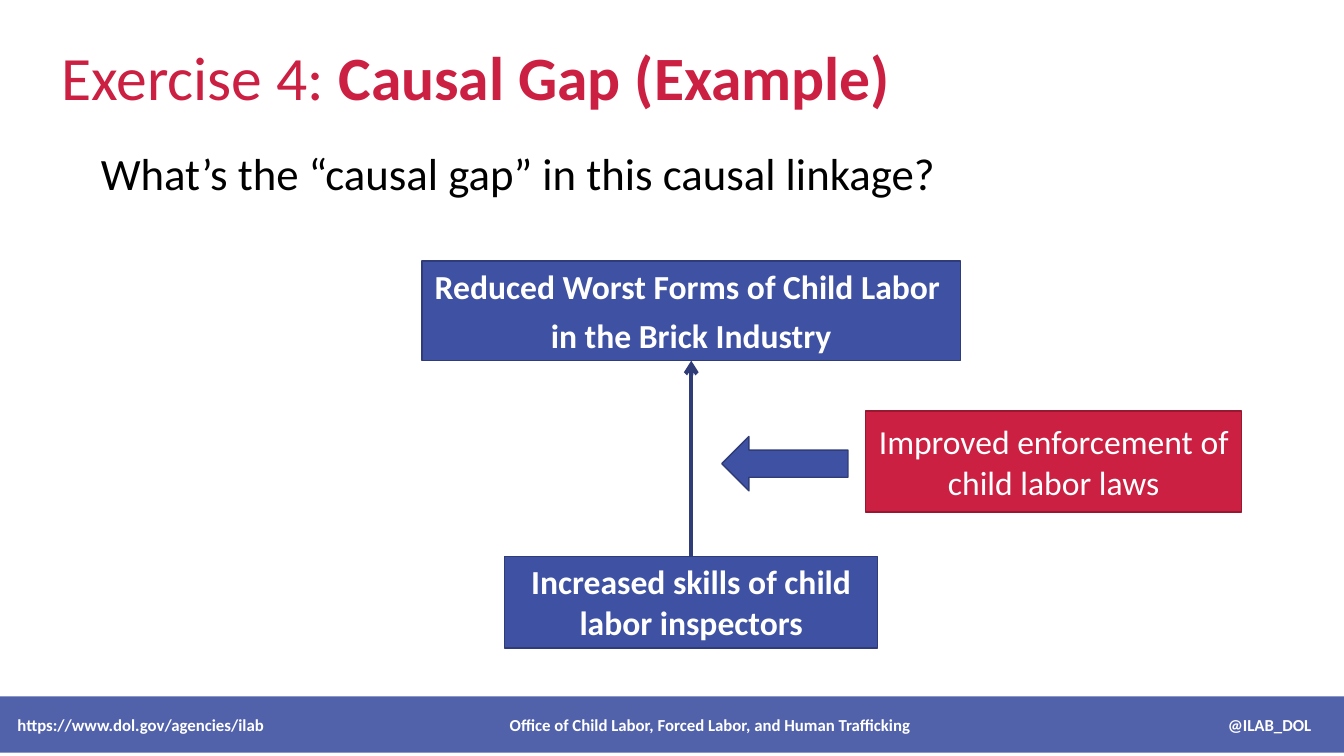
from lxml.etree import SubElement
from pptx import Presentation
from pptx.dml.color import RGBColor
from pptx.enum.shapes import MSO_CONNECTOR, MSO_SHAPE
from pptx.enum.text import MSO_ANCHOR, PP_ALIGN
from pptx.oxml.ns import qn
from pptx.util import Cm, Pt

BLUE = RGBColor(0x3F, 0x51, 0xA2)
NAVY = RGBColor(0x2F, 0x3C, 0x78)
RED = RGBColor(0xCB, 0x20, 0x42)
DARK_RED = RGBColor(0x96, 0x18, 0x31)
WHITE = RGBColor(0xFF, 0xFF, 0xFF)
BLACK = RGBColor(0x00, 0x00, 0x00)


class SlideBuilder:
    font_name = "Calibri"

    def __init__(self, page):
        self.page = page

    def fill_text(self, box, paragraphs, size, color, align, anchor, wrap=True):
        frame = box.text_frame
        frame.word_wrap = wrap
        frame.vertical_anchor = anchor
        for index, spans in enumerate(paragraphs):
            para = frame.add_paragraph() if index else frame.paragraphs[0]
            para.alignment = align
            para.space_before = Pt(6 if index else 0)
            for text, bold in spans:
                span = para.add_run()
                span.text = text
                span.font.name = self.font_name
                span.font.size = Pt(size)
                span.font.bold = bold
                span.font.color.rgb = color

    def text(self, place, spans, size, color, align=PP_ALIGN.LEFT):
        box = self.page.shapes.add_textbox(*map(Cm, place))
        self.fill_text(box, [spans], size, color, align, MSO_ANCHOR.MIDDLE)

    def shape(self, place, fill, line=None, kind=MSO_SHAPE.RECTANGLE):
        shape = self.page.shapes.add_shape(kind, *map(Cm, place))
        shape.shadow.inherit = False
        shape.fill.solid()
        shape.fill.fore_color.rgb = fill
        if line is None:
            shape.line.fill.background()
        else:
            shape.line.color.rgb = line
            shape.line.width = Pt(1)
        return shape

    def label(self, place, paragraphs, fill, line, anchor=MSO_ANCHOR.TOP, wrap=True):
        box = self.shape(place, fill, line)
        self.fill_text(box, paragraphs, 24, WHITE, PP_ALIGN.CENTER, anchor, wrap)
        return box

    def link(self, start, start_site, end, end_site):
        link = self.page.shapes.add_connector(MSO_CONNECTOR.STRAIGHT, 0, 0, 0, 0)
        link.begin_connect(start, start_site)
        link.end_connect(end, end_site)
        link.line.color.rgb = NAVY
        link.line.width = Pt(3)
        properties = link._element.spPr
        SubElement(properties.find(qn("a:ln")), qn("a:tailEnd"), type="arrow")
        SubElement(properties, qn("a:effectLst"))

    def footer(self, place, entries):
        bar = self.shape(place, BLUE)
        color = bar._element.spPr.find(qn("a:solidFill"))[0]
        SubElement(color, qn("a:alpha"), val="90000")
        for left, width, text, align in entries:
            self.text((left, place[1], width, place[3]), [(text, True)], 12, WHITE, align)


def main():
    deck = Presentation()
    deck.slide_width = Cm(33.87)
    deck.slide_height = Cm(19.05)
    builder = SlideBuilder(deck.slides.add_slide(deck.slide_layouts[6]))

    builder.text((1.3, 1.12, 23.5, 1.57),
                 [("Exercise 4: ", False), ("Causal Gap (Example)", True)], 44, RED)
    builder.text((2.29, 3.2, 24.33, 2.31),
                 [("What’s the “causal gap” in this causal linkage?", False)], 32, BLACK)

    outcome = builder.label(
        (10.64, 6.58, 13.56, 2.51),
        [[("Reduced Worst Forms of Child Labor ", True)],
         [("in the Brick Industry", True)]],
        BLUE, NAVY, wrap=False)
    skills = builder.label(
        (12.72, 14.02, 9.4, 2.31),
        [[("Increased skills of child labor inspectors", True)]], BLUE, NAVY)
    builder.link(skills, 0, outcome, 2)
    builder.label(
        (21.82, 10.36, 9.47, 2.54),
        [[("Improved enforcement of child labor laws", False)]],
        RED, DARK_RED, MSO_ANCHOR.MIDDLE)
    builder.shape((18.19, 11, 3.18, 1.37), BLUE, NAVY, MSO_SHAPE.LEFT_ARROW)

    builder.footer((-0.1, 17.55, 33.97, 1.42), [
        (0.19, 9, "https://www.dol.gov/agencies/ilab", PP_ALIGN.LEFT),
        (11.9, 12, "Office of Child Labor, Forced Labor, and Human Trafficking", PP_ALIGN.CENTER),
        (27.3, 6, "@ILAB_DOL", PP_ALIGN.RIGHT),
    ])
    deck.save("out.pptx")


if __name__ == "__main__":
    main()
